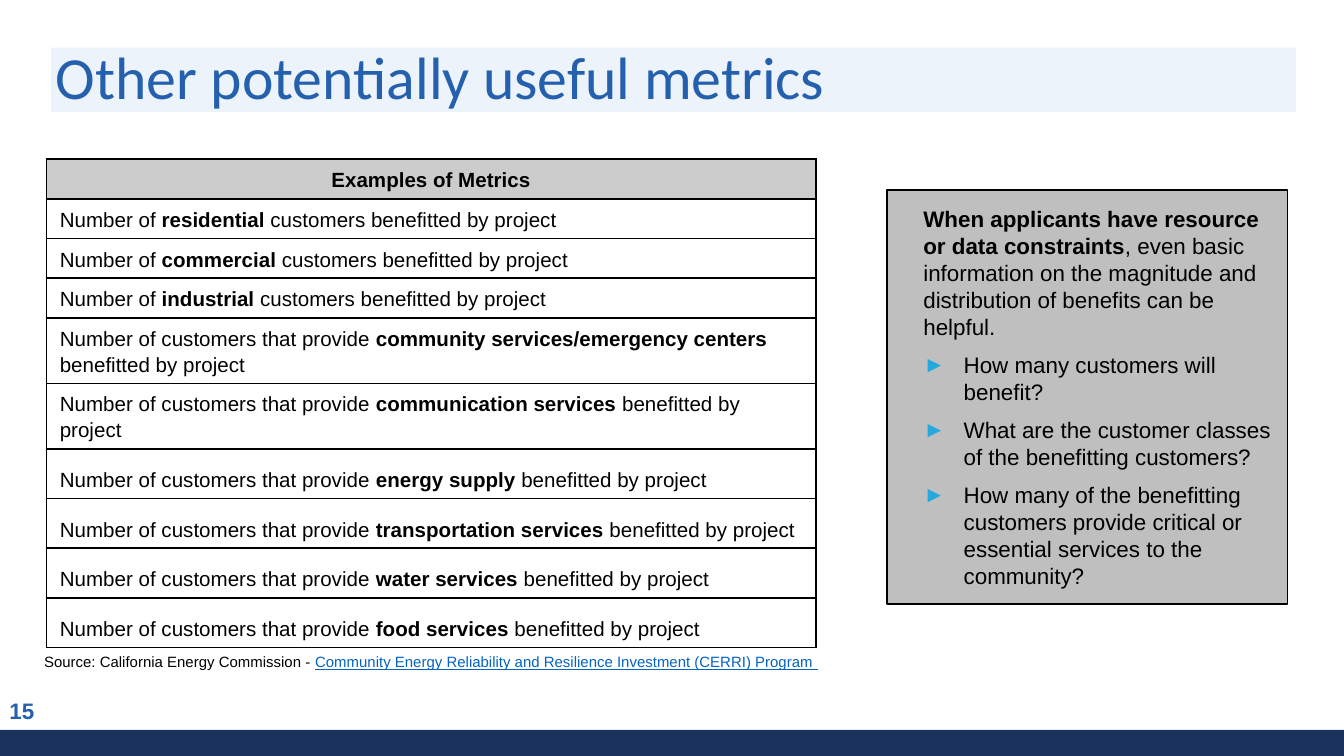
from pptx import Presentation
from pptx.dml.color import RGBColor
from pptx.enum.shapes import MSO_SHAPE
from pptx.enum.text import MSO_ANCHOR, MSO_AUTO_SIZE, PP_ALIGN
from pptx.oxml import parse_xml
from pptx.oxml.ns import nsdecls
from pptx.util import Pt

RECT = MSO_SHAPE.RECTANGLE
LEFT, CENTER = PP_ALIGN.LEFT, PP_ALIGN.CENTER
TOP, MIDDLE, BOTTOM = MSO_ANCHOR.TOP, MSO_ANCHOR.MIDDLE, MSO_ANCHOR.BOTTOM
NO_FIT = MSO_AUTO_SIZE.NONE

# Content: words between asterisks are bold
TITLE = "Other potentially useful metrics"
HEAD = "*Examples of Metrics*"
USERS = ["residential", "commercial", "industrial"]
NEEDS = ["community services/emergency centers", "communication services",
         "energy supply", "transportation services", "water services",
         "food services"]
ROWS = ([f"Number of *{user}* customers benefitted by project" for user in USERS]
        + [f"Number of customers that provide *{need}* benefitted by project"
           for need in NEEDS])
LEAD = ("*When applicants have resource or data constraints*, even basic "
        "information on the magnitude and distribution of benefits can be helpful.")
ASKS = ["How many customers will benefit?",
        "What are the customer classes of the benefitting customers?",
        "How many of the benefitting customers provide critical or essential "
        "services to the community?"]
SOURCE = "Source: California Energy Commission - "
LINK = "Community Energy Reliability and Resilience Investment (CERRI) Program "
NUMBER = "*15*"

THEME = {
    "head_font": "Calibri", "font": "Arial",
    "title": 32, "panel": 12, "number": 12, "table": 11, "source": 8,
    "ink": "000000", "blue": "2460AD", "navy": "1A325D", "pale": "ECF3FA",
    "head": "CCCCCC", "grey": "BFBFBF", "mark": "25A8DC", "link": "0563C1",
}
PX = 4572  # 200 px to the inch
WIDE, HIGH = 2000, 1125


def px(*nums):
    return [num * PX for num in nums]


def color(name):
    return RGBColor.from_string(THEME[name])


def style(run, size, ink="ink", face="font", bold=False):
    font = run.font
    font.name, font.size, font.bold = THEME[face], Pt(THEME[size]), bold
    font.color.rgb = color(ink)


def write(para, text, size, ink="ink", face="font"):
    for i, part in enumerate(text.split("*")):
        if part:
            run = para.add_run()
            run.text = part
            style(run, size, ink, face, bold=i % 2 == 1)


def frame(shape, anchor, pad=(14, 7)):
    box = shape.text_frame
    box.word_wrap, box.auto_size, box.vertical_anchor = True, NO_FIT, anchor
    box.margin_left = box.margin_right = pad[0] * PX
    box.margin_top = box.margin_bottom = pad[1] * PX
    return box


def place(shape, *box):
    shape.left, shape.top, shape.width, shape.height = px(*box)


def band(shapes, fill, *box):
    shape = shapes.add_shape(RECT, *px(*box))
    shape.shadow.inherit = False
    shape.fill.solid()
    shape.fill.fore_color.rgb = color(fill)
    shape.line.fill.background()
    # Bands lie behind the placeholders
    shapes._spTree.remove(shape._element)
    shapes._spTree.insert(2, shape._element)


def indent(para, left, hang=0, mark=None):
    props = para._p.get_or_add_pPr()
    props.set("marL", str(left * PX))
    props.set("indent", str(-hang * PX))
    para.alignment = LEFT
    para.space_before, para.space_after = Pt(0), Pt(6)
    ns = nsdecls("a")
    if mark:
        props.append(parse_xml(
            f'<a:buClr {ns}><a:srgbClr val="{THEME["mark"]}"/></a:buClr>'))
        props.append(parse_xml(f'<a:buFont {ns} typeface="Arial"/>'))
        props.append(parse_xml(f'<a:buChar {ns} char="{mark}"/>'))
    else:
        props.append(parse_xml(f"<a:buNone {ns}/>"))


def border(cell):
    props = cell._tc.get_or_add_tcPr()
    for i, side in enumerate(("lnL", "lnR", "lnT", "lnB")):
        props.insert(i, parse_xml(
            f'<a:{side} {nsdecls("a")} w="12700"><a:solidFill>'
            f'<a:srgbClr val="{THEME["ink"]}"/></a:solidFill></a:{side}>'))


deck = Presentation()
deck.slide_width, deck.slide_height = px(WIDE, HIGH)
slide = deck.slides.add_slide(deck.slide_layouts[1])
shapes = slide.shapes

# Bands behind the title and at the foot
band(shapes, "pale", 76, 71, 1853, 96)
band(shapes, "navy", 0, 1086, WIDE, HIGH - 1086)

# Title
title = shapes.title
place(title, 69, 99, 1800, 76)
para = frame(title, BOTTOM).paragraphs[0]
para.alignment, para.line_spacing = LEFT, 0.9
write(para, TITLE, "title", "blue", "head_font")

# Metrics table: short rows, then two-line rows, then loose rows
heights = [59] * 4 + [97] * 2 + [74] * 4
grid = shapes.add_table(len(heights), 1, *px(69, 237, 1145, sum(heights))).table
for i, (text, high) in enumerate(zip([HEAD] + ROWS, heights)):
    grid.rows[i].height = high * PX
    cell = grid.cell(i, 0)
    cell.vertical_anchor = BOTTOM
    if i == 0:
        cell.fill.solid()
        cell.fill.fore_color.rgb = color("head")
    else:
        cell.fill.background()
    border(cell)
    para = cell.text_frame.paragraphs[0]
    para.line_spacing = 1.14
    para.alignment = CENTER if i == 0 else LEFT
    write(para, text, "table")

# Slide number
para = frame(shapes.add_textbox(*px(0, 1028, 450, 60)), MIDDLE).paragraphs[0]
write(para, NUMBER, "number", "blue")

# Source line
note = shapes.add_textbox(*px(40, 962, 1203, 48))
para = frame(note, TOP, (20, 10)).paragraphs[0]
para.alignment = CENTER
write(para, SOURCE, "source")
write(para, LINK, "source", "link")
para.runs[-1].font.underline = True

# Panel of questions
panel = slide.placeholders[1]
place(panel, 1320, 283, 596, 616)
panel.fill.solid()
panel.fill.fore_color.rgb = color("grey")
panel.line.color.rgb = color("ink")
panel.line.width = Pt(0.75)
box = frame(panel, MIDDLE)
indent(box.paragraphs[0], 40)
write(box.paragraphs[0], LEAD, "panel")
for ask in ASKS:
    para = box.add_paragraph()
    indent(para, 100, 60, "►")
    write(para, ask, "panel")

deck.save("out.pptx")
